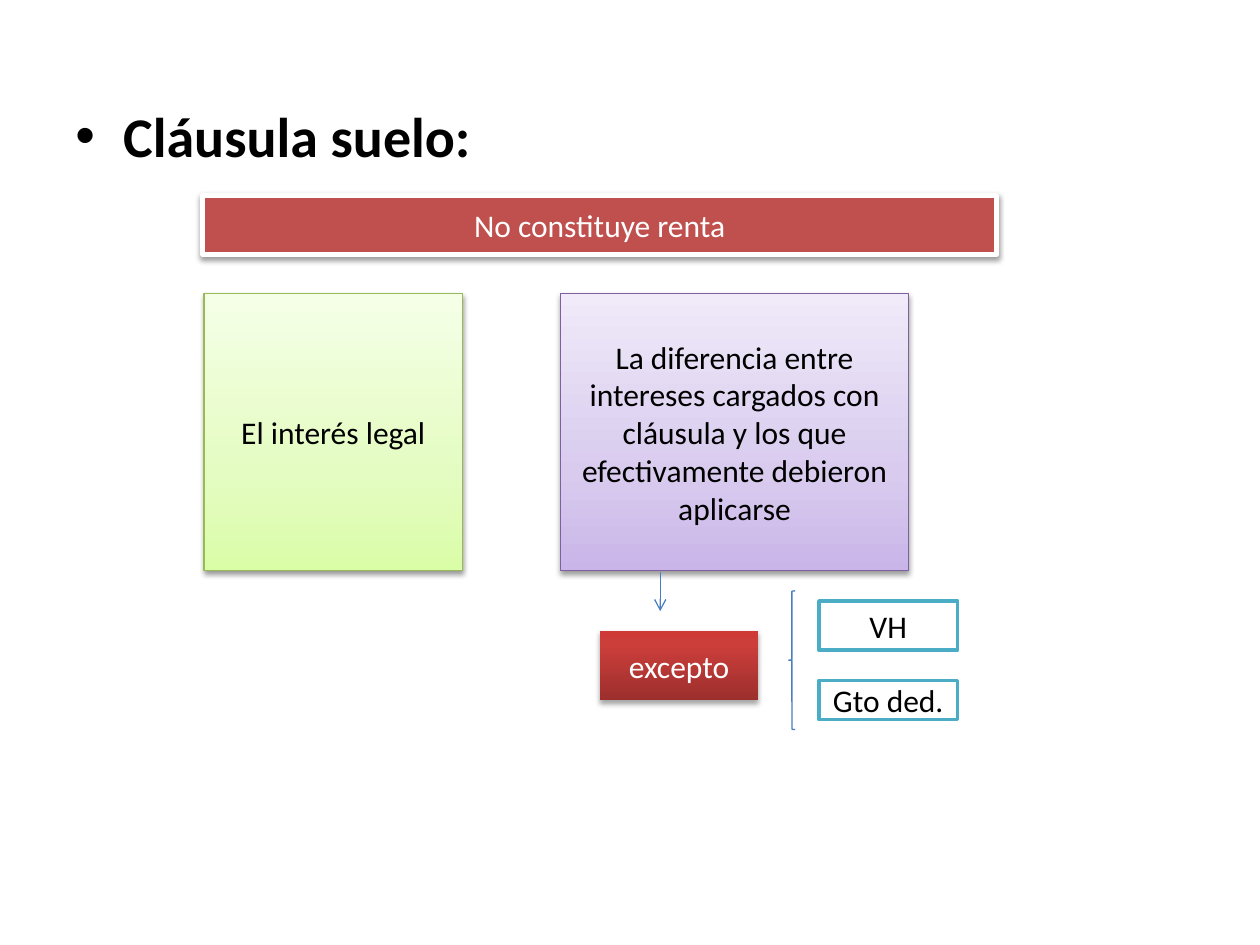
from lxml.etree import SubElement
from pptx import Presentation
from pptx.dml.color import RGBColor
from pptx.enum.shapes import MSO_CONNECTOR as Connector, MSO_SHAPE as Shape
from pptx.enum.text import MSO_ANCHOR as Anchor, PP_ALIGN as Align
from pptx.oxml.ns import qn
from pptx.util import Inches, Pt

BLACK = RGBColor(0x00, 0x00, 0x00)
WHITE = RGBColor(0xFF, 0xFF, 0xFF)
BRICK = RGBColor(0xC0, 0x50, 0x4D)
GREEN = RGBColor(0x98, 0xB9, 0x55)
PURPLE = RGBColor(0x7D, 0x60, 0xA0)
BLUE = RGBColor(0x4B, 0x7E, 0xBC)
TEAL = RGBColor(0x4B, 0xAC, 0xC6)

# Gradients run from bottom to top: (position in percent, colour)
GREEN_FADE = [(0, RGBColor(0xDA, 0xFD, 0xA7)), (35, RGBColor(0xE4, 0xFC, 0xC2)),
              (100, RGBColor(0xF5, 0xFF, 0xE7))]
PURPLE_FADE = [(0, RGBColor(0xC9, 0xB5, 0xE8)), (35, RGBColor(0xD8, 0xCB, 0xEE)),
               (100, RGBColor(0xF0, 0xEA, 0xF9))]
RED_FADE = [(0, RGBColor(0x9C, 0x2F, 0x2D)), (80, RGBColor(0xCB, 0x3E, 0x3A)),
            (100, RGBColor(0xCE, 0x3B, 0x37))]


def add_run(paragraph, text, **font_format):
    run = paragraph.add_run()
    run.text = text
    for name, value in {"name": "Calibri", **font_format}.items():
        if name == "color":
            run.font.color.rgb = value
        else:
            setattr(run.font, name, value)


def set_fill(shape, fill):
    """Fill with one colour, or with a gradient when given a list of stops."""
    if not isinstance(fill, list):
        shape.fill.solid()
        shape.fill.fore_color.rgb = fill
        return
    shape.fill.gradient()
    shape.fill.gradient_angle = 90
    stop_list = next(shape._element.spPr.iter(qn("a:gsLst")))
    for stop in list(stop_list):
        stop_list.remove(stop)
    for position, color in fill:
        stop = SubElement(stop_list, qn("a:gs"), pos=str(position * 1000))
        SubElement(stop, qn("a:srgbClr"), val=str(color))


def set_line(line, color, width):
    line.color.rgb = color
    line.width = Pt(width)


def add_shadow(shape, opacity, distance):
    effects = shape._element.spPr.find(qn("a:effectLst"))
    shadow = SubElement(effects, qn("a:outerShdw"), blurRad=str(Pt(3.1)),
                        dist=str(Pt(distance)), dir="5400000", rotWithShape="0")
    color = SubElement(shadow, qn("a:srgbClr"), val=str(BLACK))
    SubElement(color, qn("a:alpha"), val=str(opacity * 1000))


def add_box(slide, text, place, fill, line=None, color=BLACK, shadow=None):
    box = slide.shapes.add_shape(Shape.RECTANGLE, *map(Inches, place))
    box.shadow.inherit = False
    set_fill(box, fill)
    if line:
        set_line(box.line, *line)
    else:
        box.line.fill.background()
    if shadow:
        add_shadow(box, *shadow)
    frame = box.text_frame
    frame.word_wrap = True
    frame.vertical_anchor = Anchor.MIDDLE
    paragraph = frame.paragraphs[0]
    paragraph.alignment = Align.CENTER
    add_run(paragraph, text, size=Pt(18), color=color)


def add_bullet_heading(slide, text):
    frame = slide.shapes.add_textbox(*map(Inches, (0.5, 0.76, 9, 5.94))).text_frame
    frame.word_wrap = True
    paragraph = frame.paragraphs[0]
    properties = paragraph._p.get_or_add_pPr()
    indent = Inches(0.38)
    properties.set("marL", str(indent))
    properties.set("indent", str(-indent))
    SubElement(properties, qn("a:buFont"), typeface="Arial")
    SubElement(properties, qn("a:buChar"), char="•")
    add_run(paragraph, text, size=Pt(32), bold=True, color=BLACK)


def add_brace(slide, place):
    brace = slide.shapes.add_shape(Shape.LEFT_BRACE, *map(Inches, place))
    brace.shadow.inherit = False
    brace.fill.background()
    set_line(brace.line, BLUE, 0.75)


def add_arrow(slide, start, end):
    arrow = slide.shapes.add_connector(Connector.STRAIGHT, *map(Inches, start + end))
    set_line(arrow.line, BLUE, 0.75)
    SubElement(arrow.line._get_or_add_ln(), qn("a:tailEnd"), type="arrow")
    SubElement(arrow._element.spPr, qn("a:effectLst"))


def main():
    presentation = Presentation()
    presentation.slide_width = Inches(10)
    presentation.slide_height = Inches(7.5)
    slide = presentation.slides.add_slide(presentation.slide_layouts[6])

    soft_shadow = (38, 1.6)
    add_bullet_heading(slide, "Cláusula suelo:")
    add_box(slide, "No constituye renta", (1.61, 1.55, 6.3, 0.47), BRICK,
            (WHITE, 3), WHITE, soft_shadow)
    add_box(slide, "El interés legal", (1.62, 2.33, 2.05, 2.2), GREEN_FADE,
            (GREEN, 0.75), shadow=soft_shadow)
    add_box(slide, "La diferencia entre intereses cargados con cláusula y los que "
            "efectivamente debieron aplicarse", (4.45, 2.33, 2.76, 2.2), PURPLE_FADE,
            (PURPLE, 0.75), shadow=soft_shadow)
    add_box(slide, "excepto", (4.76, 5.01, 1.26, 0.55), RED_FADE,
            color=WHITE, shadow=(35, 1.8))
    add_brace(slide, (6.26, 4.69, 0.05, 1.1))
    for text, top, height in (("VH", 4.77, 0.39), ("Gto ded.", 5.4, 0.31)):
        add_box(slide, text, (6.5, top, 1.1, height), WHITE, (TEAL, 2))
    add_arrow(slide, (5.24, 4.54), (5.24, 4.85))

    presentation.save("out.pptx")


if __name__ == "__main__":
    main()
